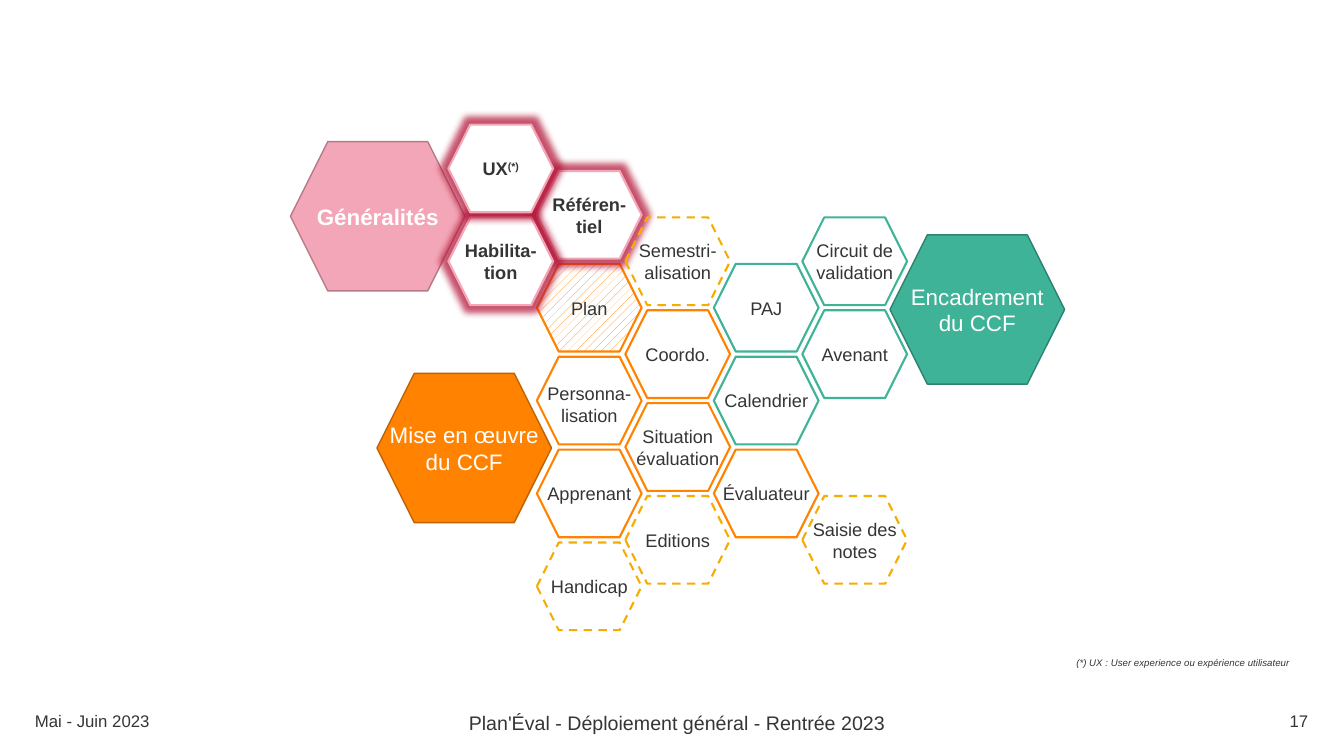
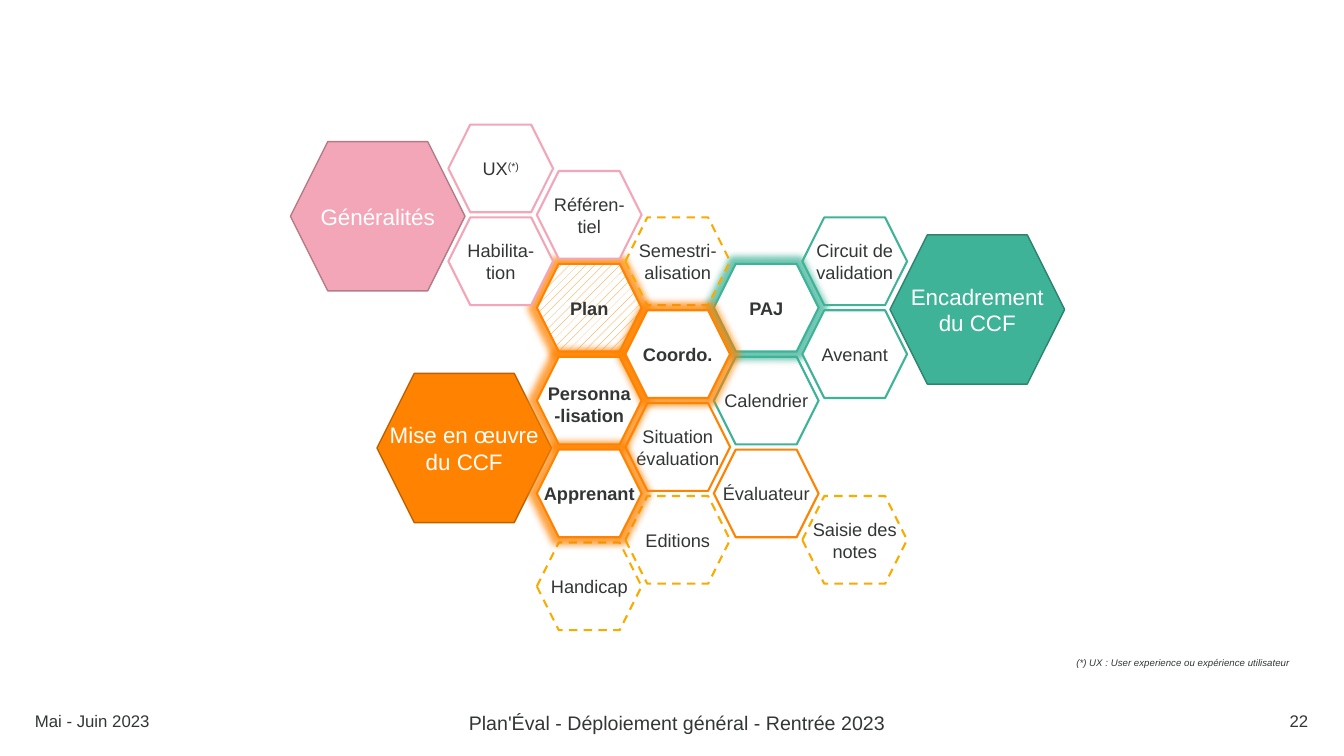
from dataclasses import dataclass

from lxml.etree import SubElement
from pptx import Presentation
from pptx.dml.color import RGBColor
from pptx.enum.dml import MSO_LINE, MSO_PATTERN
from pptx.enum.shapes import MSO_SHAPE
from pptx.enum.text import MSO_ANCHOR, PP_ALIGN
from pptx.oxml.ns import qn
from pptx.shapes.autoshape import Shape
from pptx.slide import Slide
from pptx.util import Cm, Pt

# Shared style
FONT = "Arial"
INK, WHITE = "343636", "FFFFFF"
PINK, CRIMSON = "F3A6B7", "B4183B"
ORANGE, AMBER, GREEN = "FF8300", "F8AC00", "3FB398"

# Honeycomb grid in centimetres: a row is half a cell high
GRID_LEFT, GRID_TOP = 11.3, 3.14
COLUMN_STEP, ROW_STEP = 2.23, 1.17
CELL_WIDTH, CELL_HEIGHT = 2.64, 2.21


@dataclass(frozen=True)
class Box:
    left: float
    top: float
    width: float
    height: float

    def centred(self, width: float, height: float, drop: float = 0) -> "Box":
        return Box(self.left + (self.width - width) / 2,
                   self.top + (self.height - height) / 2 + drop, width, height)

    def lengths(self) -> tuple:
        return tuple(Cm(value) for value in (self.left, self.top, self.width, self.height))


@dataclass(frozen=True)
class Theme:
    label: str
    left: float
    top: float
    fill: str
    line: str


@dataclass(frozen=True)
class Cell:
    label: str
    column: int
    row: int
    line: str
    fill: str = WHITE
    dashed: bool = False
    hatched: bool = False
    superscript: str = ""
    drop: float = 0


@dataclass(frozen=True)
class Page:
    number: int
    glows: dict
    bold_theme: str = ""


THEMES = (
    Theme("Généralités", 7.32, 3.57, PINK, "B47B87"),
    Theme("Mise en œuvre du CCF", 9.5, 9.41, ORANGE, "BD6100"),
    Theme("Encadrement\ndu CCF", 22.43, 5.92, GREEN, "2F8470"),
)

CELLS = (
    Cell("Plan", 1, 3, ORANGE, hatched=True),
    Cell("Situation évaluation", 2, 6, ORANGE),
    Cell("Évaluateur", 3, 7, ORANGE),
    Cell("Calendrier", 3, 5, GREEN),
    Cell("Personna-lisation", 1, 5, ORANGE, drop=0.1),
    Cell("Circuit de validation", 4, 2, GREEN),
    Cell("PAJ", 3, 3, GREEN),
    Cell("Avenant", 4, 4, GREEN),
    Cell("Référen-tiel", 1, 1, PINK),
    Cell("Habilita-tion", 0, 2, PINK),
    Cell("UX", 0, 0, PINK, superscript="(*)"),
    Cell("Editions", 2, 8, AMBER, dashed=True),
    Cell("Handicap", 1, 9, AMBER, dashed=True),
    Cell("Semestri-alisation", 2, 2, AMBER, fill="", dashed=True),
    Cell("Saisie des notes", 4, 8, AMBER, dashed=True),
    Cell("Apprenant", 1, 7, ORANGE),
    Cell("Coordo.", 2, 4, ORANGE),
)

PAGES = (
    Page(17, dict.fromkeys(("UX", "Référen-tiel", "Habilita-tion"), CRIMSON), "Généralités"),
    Page(22, {"PAJ": GREEN} | dict.fromkeys(
        ("Plan", "Coordo.", "Personna-lisation", "Apprenant"), ORANGE)),
)


def colour(value: str) -> RGBColor:
    return RGBColor.from_string(value)


def set_values(target: object, values: dict) -> None:
    for name, value in values.items():
        setattr(target, name, value)


def add_text(slide: Slide, box: Box, text: str, size: float, ink: str = INK,
             align: PP_ALIGN = PP_ALIGN.CENTER, inset: float = 0.1,
             superscript: str = "", **font_values: bool) -> None:
    frame = slide.shapes.add_textbox(*box.lengths()).text_frame
    margins = ("margin_left", "margin_top", "margin_right", "margin_bottom")
    set_values(frame, {"word_wrap": True, "vertical_anchor": MSO_ANCHOR.MIDDLE}
               | dict.fromkeys(margins, Cm(inset)))
    for index, line in enumerate(text.split("\n")):
        paragraph = frame.add_paragraph() if index else frame.paragraphs[0]
        paragraph.alignment = align
        for part, raised in ((line, False), (superscript, True)):
            if not part:
                continue
            run = paragraph.add_run()
            run.text = part
            set_values(run.font, {"name": FONT, "size": Pt(size)} | font_values)
            run.font.color.rgb = colour(ink)
            if raised:
                run.font._element.set("baseline", "30000")


def add_hexagon(slide: Slide, box: Box, fill: str, line: str, weight: float) -> Shape:
    shape = slide.shapes.add_shape(MSO_SHAPE.HEXAGON, *box.lengths())
    shape.shadow.inherit = False
    if fill:
        shape.fill.solid()
        shape.fill.fore_color.rgb = colour(fill)
    else:
        shape.fill.background()
    shape.line.color.rgb = colour(line)
    shape.line.width = Pt(weight)
    return shape


def add_glow(shape: Shape, tint: str) -> None:
    """Put a centred, enlarged soft shadow around the shape."""
    effects = shape._element.spPr.find(qn("a:effectLst"))
    shadow = SubElement(effects, qn("a:outerShdw"), blurRad=str(Pt(5)), dist="0",
                        sx="115000", sy="115000", algn="ctr", rotWithShape="0")
    tone = SubElement(shadow, qn("a:srgbClr"), val=tint)
    SubElement(tone, qn("a:alpha"), val="75000")


def add_theme(slide: Slide, theme: Theme, bold: bool) -> None:
    box = Box(theme.left, theme.top, 4.4, 3.76)
    add_hexagon(slide, box, theme.fill, theme.line, 1)
    add_text(slide, box.centred(4.1, 2.92), theme.label, 16, WHITE, bold=bold)


def add_cell(slide: Slide, cell: Cell, glow: str) -> None:
    box = Box(GRID_LEFT + cell.column * COLUMN_STEP, GRID_TOP + cell.row * ROW_STEP,
              CELL_WIDTH, CELL_HEIGHT)
    shape = add_hexagon(slide, box, cell.fill, cell.line, 1.5)
    if cell.dashed:
        shape.line.dash_style = MSO_LINE.DASH
    if cell.hatched:
        shape.fill.patterned()
        shape.fill.pattern = MSO_PATTERN.PERCENT_20
        shape.fill.fore_color.rgb = colour(cell.line)
        shape.fill.back_color.rgb = colour(WHITE)
    if glow:
        add_glow(shape, glow)
    # Single words get a little more room so that they stay on one line
    wraps = "-" in cell.label or " " in cell.label
    add_text(slide, box.centred(2.39 if wraps else 2.52, 1.42, cell.drop), cell.label, 13,
             superscript=cell.superscript, bold=bool(glow))


def add_footer(slide: Slide, number: int) -> None:
    add_text(slide, Box(26.42, 16.46, 6.8, 0.6), "", 12, italic=True,
             superscript="(*) UX : User experience ou expérience utilisateur")
    add_text(slide, Box(0.63, 17.65, 7.9, 1.02), "Mai - Juin 2023", 12,
             align=PP_ALIGN.LEFT, inset=0.25)
    add_text(slide, Box(11.35, 17.7, 11.43, 1.02),
             "Plan'Éval - Déploiement général - Rentrée 2023", 14, inset=0.25)
    add_text(slide, Box(25.6, 17.65, 7.62, 1.02), str(number), 12,
             align=PP_ALIGN.RIGHT, inset=0.25)


def main() -> None:
    presentation = Presentation()
    set_values(presentation, {"slide_width": Cm(33.87), "slide_height": Cm(19.05)})
    for page in PAGES:
        slide = presentation.slides.add_slide(presentation.slide_layouts[6])
        for theme in THEMES:
            add_theme(slide, theme, theme.label == page.bold_theme)
        for cell in CELLS:
            add_cell(slide, cell, page.glows.get(cell.label, ""))
        add_footer(slide, page.number)
    presentation.save("out.pptx")


if __name__ == "__main__":
    main()
